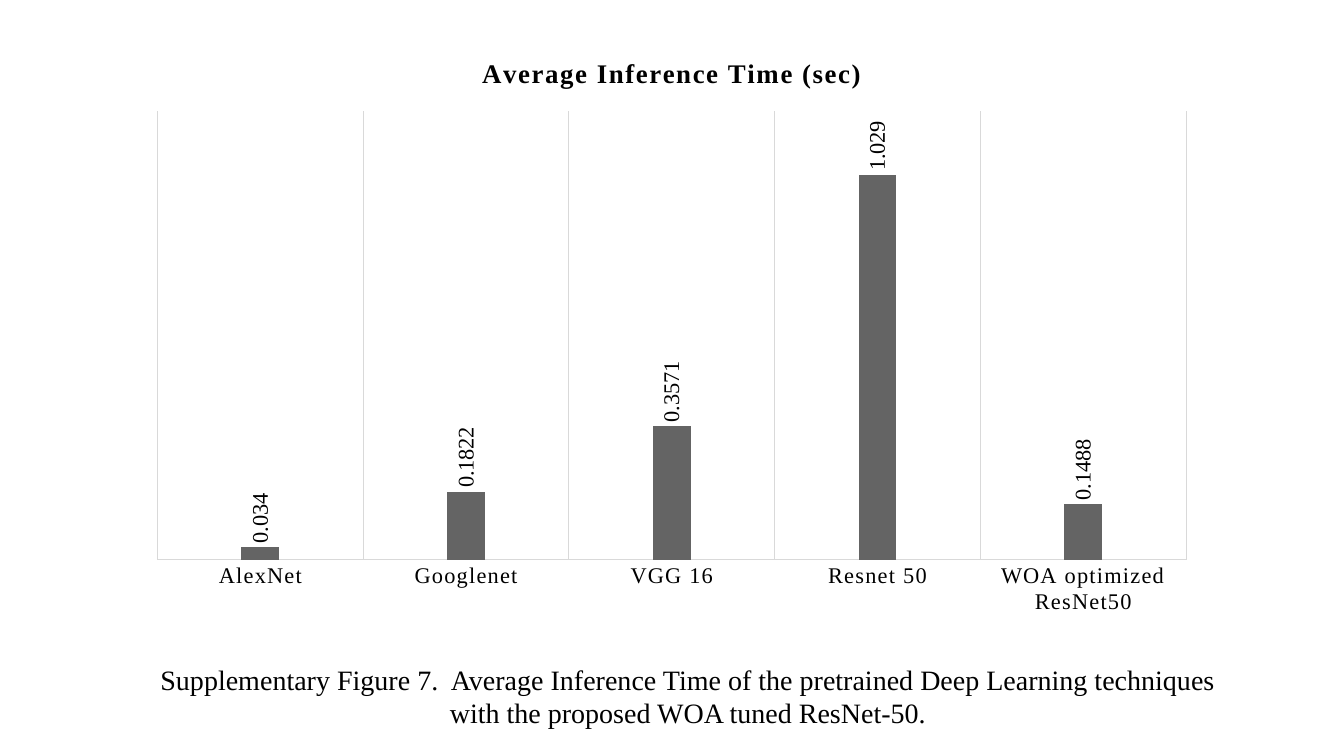
from typing import NamedTuple

from pptx import Presentation
from pptx.chart.chart import Chart
from pptx.chart.data import CategoryChartData
from pptx.dml.color import RGBColor
from pptx.enum.chart import XL_CHART_TYPE as ChartType
from pptx.enum.chart import XL_LABEL_POSITION as LabelPosition
from pptx.enum.chart import XL_TICK_MARK as TickMark
from pptx.enum.text import MSO_ANCHOR as Anchor
from pptx.enum.text import PP_ALIGN as Align
from pptx.oxml import parse_xml
from pptx.oxml.ns import nsdecls, qn
from pptx.slide import Slide
from pptx.text.text import Font
from pptx.util import Pt

BLACK = RGBColor(0x00, 0x00, 0x00)
BAR_GRAY = RGBColor(0x64, 0x64, 0x64)
GRID_GRAY = RGBColor(0xD9, 0xD9, 0xD9)
WHITE = RGBColor(0xFF, 0xFF, 0xFF)
FONT_NAME = "Times New Roman"
CHART_TITLE = "Average Inference Time (sec)"
CAPTION_LINES = (
    "Supplementary Figure 7.  Average Inference Time of the pretrained Deep Learning techniques",
    "with the proposed WOA tuned ResNet-50.",
)


class Model(NamedTuple):
    name: str
    seconds: float


MODELS = (
    Model("AlexNet", 0.034),
    Model("Googlenet", 0.1822),
    Model("VGG 16", 0.3571),
    Model("Resnet 50", 1.029),
    Model("WOA optimized ResNet50", 0.1488),
)


def style_font(font: Font, size: float, bold: bool = False) -> None:
    font.name = FONT_NAME
    font.size = Pt(size)
    font.bold = bold
    font.color.rgb = BLACK


def place_plot(chart: Chart, x: float, y: float, w: float, h: float) -> None:
    plot_area = chart.element.find(f".//{qn('c:plotArea')}")
    for layout in plot_area.findall(qn("c:layout")):
        plot_area.remove(layout)
    sizes = "".join(
        f'<c:{key} val="{value}"/>' for key, value in dict(x=x, y=y, w=w, h=h).items()
    )
    plot_area.insert(0, parse_xml(
        f'<c:layout {nsdecls("c")}><c:manualLayout><c:layoutTarget val="inner"/>'
        f'<c:xMode val="edge"/><c:yMode val="edge"/>{sizes}</c:manualLayout></c:layout>'
    ))


def set_text_details(chart: Chart) -> None:
    details = (
        (".//c:title//a:rPr", "spc", "100"),
        (".//c:catAx//a:defRPr", "spc", "100"),
        (".//c:dLbls//a:bodyPr", "rot", "-5400000"),
        (".//c:dLbls//a:bodyPr", "vert", "horz"),
    )
    for query, key, value in details:
        for element in chart.element.xpath(query):
            element.set(key, value)


def add_time_chart(slide: Slide) -> None:
    data = CategoryChartData()
    data.categories = [model.name for model in MODELS]
    data.add_series(CHART_TITLE, [model.seconds for model in MODELS])
    chart = slide.shapes.add_chart(
        ChartType.COLUMN_CLUSTERED, Pt(97.2), Pt(24.5), Pt(765.4), Pt(421.9), data
    ).chart
    style_font(chart.font, 16)
    chart.has_legend = False
    chart.has_title = True
    title = chart.chart_title
    title.include_in_layout = False
    title.text_frame.text = CHART_TITLE
    style_font(title.text_frame.paragraphs[0].runs[0].font, 19.2, bold=True)

    category_axis = chart.category_axis
    category_axis.major_tick_mark = TickMark.NONE
    category_axis.has_major_gridlines = True
    for line in (category_axis.format.line, category_axis.major_gridlines.format.line):
        line.color.rgb = GRID_GRAY
        line.width = Pt(0.75)
    style_font(category_axis.tick_labels.font, 16)

    value_axis = chart.value_axis
    value_axis.minimum_scale = 0
    value_axis.maximum_scale = 1.2
    value_axis.has_major_gridlines = False
    value_axis.visible = False

    plot = chart.plots[0]
    plot.gap_width = 444
    plot.overlap = -90
    plot.vary_by_categories = False
    fill = plot.series[0].format.fill
    fill.solid()
    fill.fore_color.rgb = BAR_GRAY
    labels = plot.series[0].data_labels
    labels.show_value = True
    labels.position = LabelPosition.OUTSIDE_END
    style_font(labels.font, 16)

    place_plot(chart, 0.02, 0.13, 0.96, 0.76)
    set_text_details(chart)


def add_caption(slide: Slide) -> None:
    text_frame = slide.shapes.add_textbox(Pt(97.2), Pt(469.4), Pt(788.4), Pt(55.4)).text_frame
    text_frame.word_wrap = False
    text_frame.vertical_anchor = Anchor.MIDDLE
    text_frame.text = "\n".join(CAPTION_LINES)
    for paragraph in text_frame.paragraphs:
        paragraph.alignment = Align.CENTER
        style_font(paragraph.runs[0].font, 20)


def main() -> None:
    presentation = Presentation()
    presentation.slide_width = Pt(960)
    presentation.slide_height = Pt(540)
    slide = presentation.slides.add_slide(presentation.slide_layouts.get_by_name("Blank"))
    background = slide.background.fill
    background.solid()
    background.fore_color.rgb = WHITE
    add_time_chart(slide)
    add_caption(slide)
    presentation.save("out.pptx")


if __name__ == "__main__":
    main()
